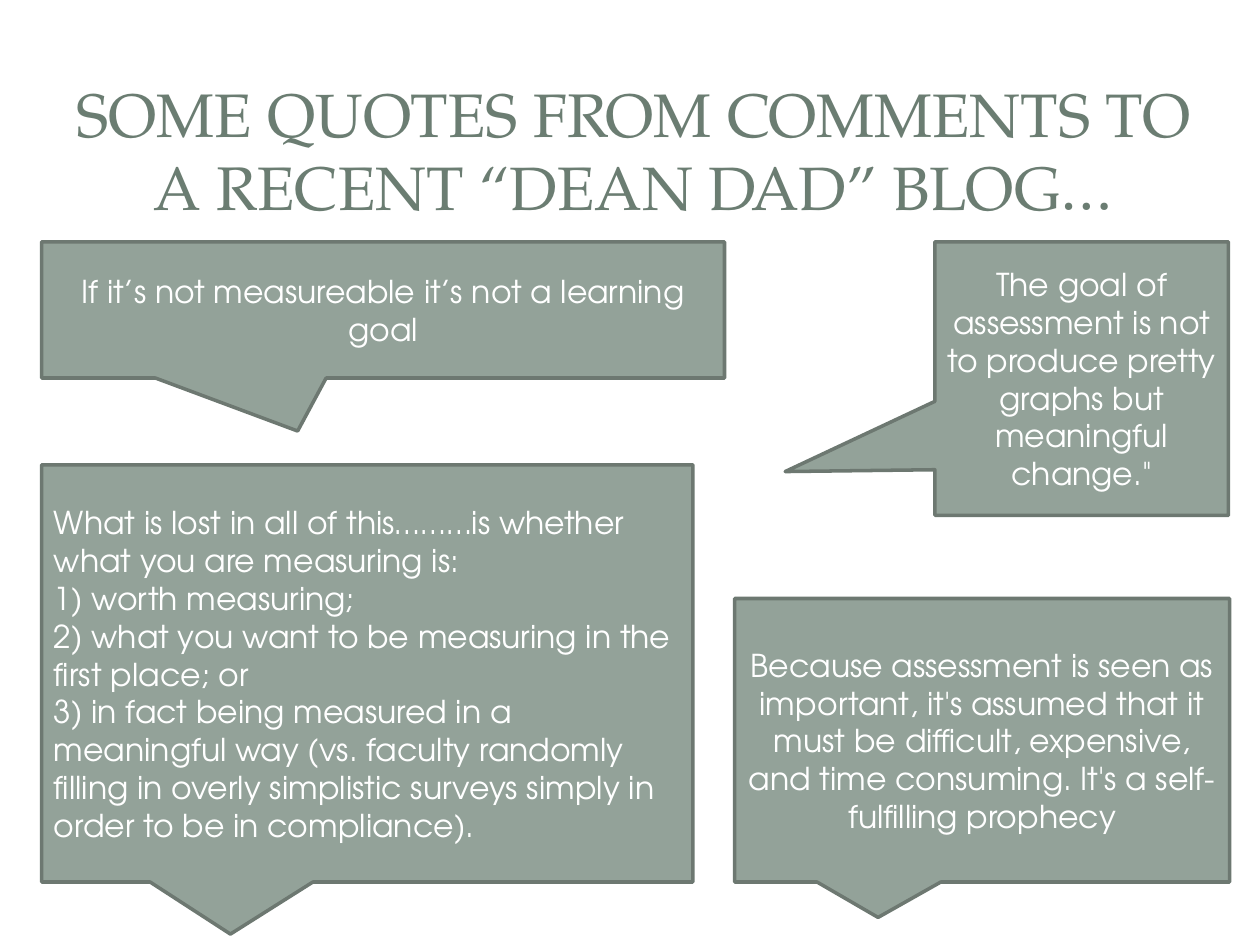
from dataclasses import dataclass

from pptx import Presentation
from pptx.dml.color import RGBColor
from pptx.enum.shapes import MSO_SHAPE
from pptx.enum.text import MSO_ANCHOR, MSO_AUTO_SIZE, PP_ALIGN
from pptx.util import Inches, Pt

CALLOUT = MSO_SHAPE.RECTANGULAR_CALLOUT
MIDDLE = MSO_ANCHOR.MIDDLE
NO_AUTOFIT = MSO_AUTO_SIZE.NONE
LEFT, CENTER = PP_ALIGN.LEFT, PP_ALIGN.CENTER
TITLE_ONLY = 5


@dataclass(frozen=True)
class Theme:
    heading_font: str = "TeX Gyre Pagella"
    quote_font: str = "TeX Gyre Adventor"
    heading_size: int = 35
    quote_size: int = 18
    outline_width: int = 2
    heading: RGBColor = RGBColor.from_string("6B7D72")
    bubble: RGBColor = RGBColor.from_string("93A299")
    outline: RGBColor = RGBColor.from_string("6D7871")
    quote: RGBColor = RGBColor.from_string("FFFFFF")


THEME = Theme()

HEADING = "SOME QUOTES FROM COMMENTS TO A RECENT “DEAN DAD” BLOG…"
HEADING_BOX = (0.47, 0.45, 9.12, 1.47)

DEFAULT_TAIL = (-0.21, 0.625)
QUOTES = [
    ("If it’s not measureable it’s not a learning goal",
     (0.33, 1.92, 5.42, 1.08), (-0.125, 0.89), CENTER),
    ("The goal of assessment is not to produce pretty graphs but "
     "meaningful change.\"",
     (7.42, 1.92, 2.33, 2.17), (-1.01, 0.34), CENTER),
    ("What is lost in all of this………is whether what you are measuring is:\n"
     "1) worth measuring;\n"
     "2) what you want to be measuring in the first place; or\n"
     "3) in fact being measured in a meaningful way (vs. faculty randomly "
     "filling in overly simplistic surveys simply in order to be in "
     "compliance).",
     (0.33, 3.69, 5.17, 3.31), DEFAULT_TAIL, LEFT),
    ("Because assessment is seen as important, it's assumed that it must be "
     "difficult, expensive, and time consuming. It's a self-fulfilling "
     "prophecy",
     (5.83, 4.75, 3.93, 2.25), DEFAULT_TAIL, CENTER),
]


def write_text(frame, text, *, font, size, color, align=CENTER):
    frame.word_wrap = True
    frame.auto_size = NO_AUTOFIT
    frame.vertical_anchor = MIDDLE
    paragraph = frame.paragraphs[0]
    paragraph.text = text
    paragraph.alignment = align
    for run in paragraph.runs:
        run.font.name = font
        run.font.size = Pt(size)
        run.font.color.rgb = color


def place_heading(slide, box):
    heading = slide.shapes.title
    heading.left, heading.top, heading.width, heading.height = map(Inches, box)
    write_text(heading.text_frame, HEADING, font=THEME.heading_font,
               size=THEME.heading_size, color=THEME.heading)


def add_quote(slide, quote, box, tail, align):
    bubble = slide.shapes.add_shape(CALLOUT, *map(Inches, box))
    bubble.shadow.inherit = False
    bubble.adjustments[0], bubble.adjustments[1] = tail
    bubble.fill.solid()
    bubble.fill.fore_color.rgb = THEME.bubble
    bubble.line.color.rgb = THEME.outline
    bubble.line.width = Pt(THEME.outline_width)
    write_text(bubble.text_frame, quote, font=THEME.quote_font,
               size=THEME.quote_size, color=THEME.quote, align=align)


def main():
    deck = Presentation()
    deck.slide_width, deck.slide_height = Inches(10), Inches(7.5)
    slide = deck.slides.add_slide(deck.slide_layouts[TITLE_ONLY])
    place_heading(slide, HEADING_BOX)
    for quote, box, tail, align in QUOTES:
        add_quote(slide, quote, box, tail, align)
    deck.save("out.pptx")


if __name__ == "__main__":
    main()
